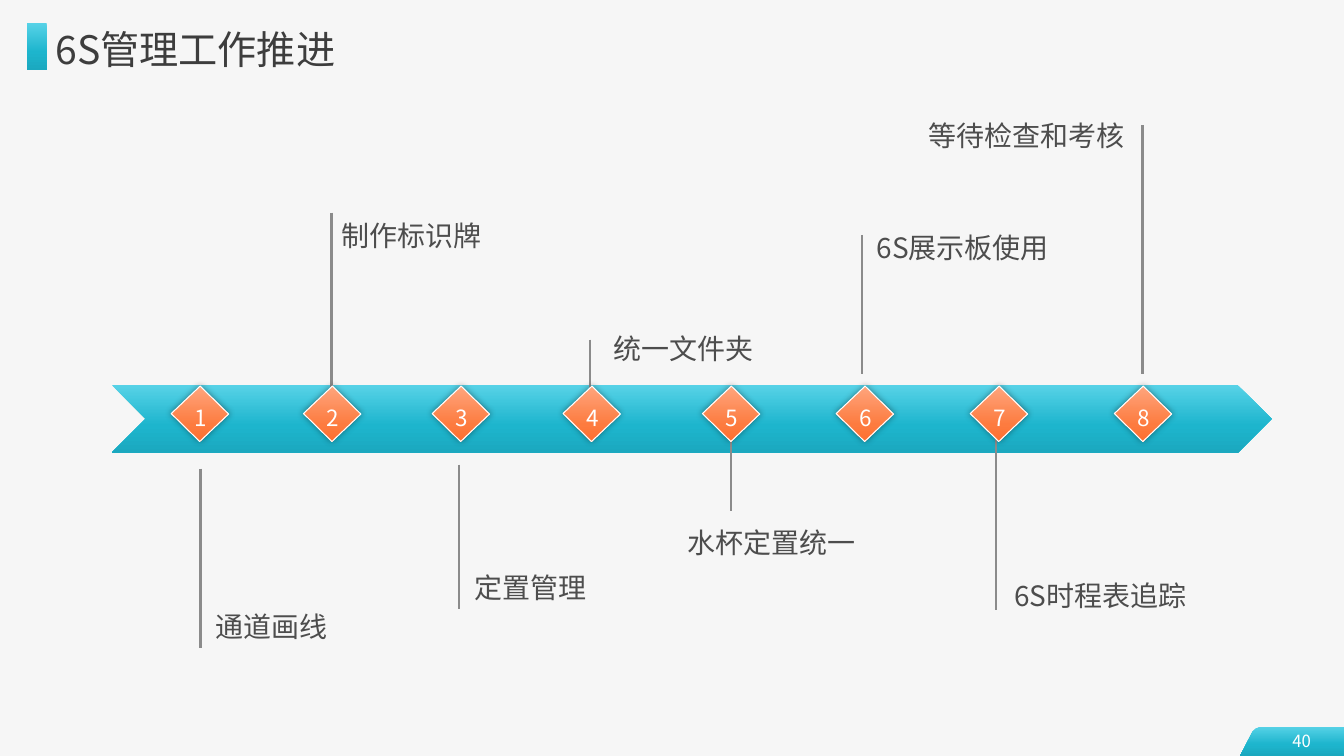
from dataclasses import dataclass

from lxml.etree import SubElement
from pptx import Presentation
from pptx.dml.color import RGBColor
from pptx.enum.shapes import MSO_CONNECTOR, MSO_SHAPE
from pptx.enum.text import MSO_ANCHOR, PP_ALIGN
from pptx.oxml.ns import qn
from pptx.util import Pt


@dataclass(frozen=True)
class Theme:
    font: str = "Noto Sans CJK SC"
    background: str = "F6F6F6"
    title: str = "3D3D3D"
    label: str = "4D4D4D"
    stem: str = "8B8B8B"
    white: str = "FFFFFF"
    teal: tuple = ((0, "57D2E7"), (60, "1DB5CD"), (100, "1BA8BF"))
    orange: tuple = ((0, "FEA67E"), (70, "FD7B3F"), (100, "FD6F2F"))
    title_size: int = 28
    label_size: int = 20
    number_size: int = 16
    page_size: int = 12


THEME = Theme()
LEFT, CENTER, RIGHT = PP_ALIGN.LEFT, PP_ALIGN.CENTER, PP_ALIGN.RIGHT
LABEL_HEIGHT = 31.7
DIAMOND_WIDTH, DIAMOND_HEIGHT = 41, 39.6

# Offsets from the roadmap's corner: diamond centre, stem (x, top, bottom),
# label text, label box (left, top, width), alignment
MILESTONES = [
    (62.9, (63.3, 254.8, 383), "通道画线", (66.9, 351.3, 129), LEFT),
    (157.4, (156.9, 71.9, 222.4), "制作标识牌", (156.9, 71.9, 189.4), LEFT),
    (249.4, (248.3, 251.9, 354.9), "定置管理", (251.9, 323.9, 175.7), LEFT),
    (342.9, (341.9, 162.6, 222.4), "统一文件夹", (351.3, 152.6, 139), LEFT),
    (442.5, (442.7, 216.6, 285), "水杯定置统一", (271.4, 291.5, 267.1), RIGHT),
    (538.1, (536.3, 87.8, 187.1), "6S展示板使用", (356.3, 80.6, 320.4), RIGHT),
    (633.9, (632.1, 216.6, 355.6), "6S时程表追踪", (507.5, 329.7, 267.8), RIGHT),
    (736.9, (736.5, 9.3, 187.1), "等待检查和考核", (462.9, 0.6, 267.8), RIGHT),
]


def color(value):
    return RGBColor.from_string(value)


def fill_gradient(shape, stops):
    """Fill from top to bottom, without outline or shadow."""
    shape.shadow.inherit = False
    shape.line.fill.background()
    shape.fill.gradient()
    shape.fill.gradient_angle = 270
    stop_list = shape.element.spPr.find(qn("a:gradFill")).find(qn("a:gsLst"))
    for old_stop in list(stop_list):
        stop_list.remove(old_stop)
    for position, value in stops:
        stop = SubElement(stop_list, qn("a:gs"), pos=str(position * 1000))
        SubElement(stop, qn("a:srgbClr"), val=value)


def add_glow_shadow(shape):
    effects = shape.element.spPr.find(qn("a:effectLst"))
    shadow = SubElement(effects, qn("a:outerShdw"), blurRad=str(Pt(5)),
                        dist="0", dir="0", algn="ctr", rotWithShape="0")
    black = SubElement(shadow, qn("a:srgbClr"), val="000000")
    SubElement(black, qn("a:alpha"), val="40000")


def write_text(shape, text, *, size, value, align=LEFT, wrap=True,
               insets=(7.2, 3.6, 7.2, 3.6)):
    frame = shape.text_frame
    frame.word_wrap = wrap
    frame.vertical_anchor = MSO_ANCHOR.MIDDLE
    (frame.margin_left, frame.margin_top,
     frame.margin_right, frame.margin_bottom) = map(Pt, insets)
    paragraph = frame.paragraphs[0]
    paragraph.alignment = align
    run = paragraph.add_run()
    run.text = text
    run.font.size = Pt(size)
    run.font.color.rgb = color(value)
    run.font.name = THEME.font
    SubElement(run.font._element, qn("a:ea"), typeface=THEME.font)


def add_text(slide, box, text, **text_format):
    write_text(slide.shapes.add_textbox(*map(Pt, box)), text, **text_format)


def add_block(slide, kind, box, stops):
    shape = slide.shapes.add_shape(kind, *map(Pt, box))
    fill_gradient(shape, stops)
    return shape


def add_stem(slide, x, top, bottom):
    stem = slide.shapes.add_connector(
        MSO_CONNECTOR.STRAIGHT, Pt(x), Pt(top), Pt(x), Pt(bottom))
    stem.line.color.rgb = color(THEME.stem)
    stem.line.width = Pt(1.5)
    SubElement(stem.element.spPr, qn("a:effectLst"))


def add_diamond(slide, center, top, number):
    diamond = add_block(
        slide, MSO_SHAPE.DIAMOND,
        (center - DIAMOND_WIDTH / 2, top, DIAMOND_WIDTH, DIAMOND_HEIGHT),
        THEME.orange)
    diamond.rotation = 0.5
    diamond.line.color.rgb = color(THEME.white)
    diamond.line.width = Pt(0.75)
    add_glow_shadow(diamond)
    write_text(diamond, str(number), size=THEME.number_size, value=THEME.white,
               align=CENTER, wrap=False, insets=(1, 5.8, 0, 0))


def add_header(slide, box, text):
    left, top, width, height = box
    add_block(slide, MSO_SHAPE.RECTANGLE, (left, top, 14, height), THEME.teal)
    add_text(slide, (left + 20.2, top + 1.4, width - 20.2, height), text,
             size=THEME.title_size, value=THEME.title, insets=(0, 0, 0, 0))


def add_roadmap(slide, box):
    left, top, width, _ = box
    add_block(slide, MSO_SHAPE.CHEVRON, (left, top + 195, width, 48.4), THEME.teal)
    for number, milestone in enumerate(MILESTONES, start=1):
        center, stem, text, label, align = milestone
        stem_x, stem_top, stem_bottom = stem
        label_left, label_top, label_width = label
        add_stem(slide, left + stem_x, top + stem_top, top + stem_bottom)
        add_text(slide,
                 (left + label_left, top + label_top, label_width, LABEL_HEIGHT),
                 text, size=THEME.label_size, value=THEME.label, align=align)
        add_diamond(slide, left + center, top + 195.8, number)


def add_page_tab(slide, box, number):
    left, top, width, height = box
    outline = [(16, 0), (13.5, 0.4), (11, 1.6), (8.8, 3.8), (0, height)]
    outline.append((width, height))
    builder = slide.shapes.build_freeform(Pt(left + width), Pt(top))
    builder.add_line_segments(
        [(Pt(left + x), Pt(top + y)) for x, y in outline], close=True)
    fill_gradient(builder.convert_to_shape(), THEME.teal)
    add_text(slide, (left + 28.8, top - 0.7, 30.2, height), str(number),
             size=THEME.page_size, value=THEME.white, align=CENTER, wrap=False)


def main():
    presentation = Presentation()
    presentation.slide_width, presentation.slide_height = Pt(960.48), Pt(540)
    slide = presentation.slides.add_slide(presentation.slide_layouts[6])
    slide.background.fill.solid()
    slide.background.fill.fore_color.rgb = color(THEME.background)
    add_page_tab(slide, (886.3, 519, 74.18, 21), 40)
    add_header(slide, (19.4, 16.6, 518.4, 33.8), "6S管理工作推进")
    add_roadmap(slide, (80, 80, 828.7, 384))
    presentation.save("out.pptx")


if __name__ == "__main__":
    main()
